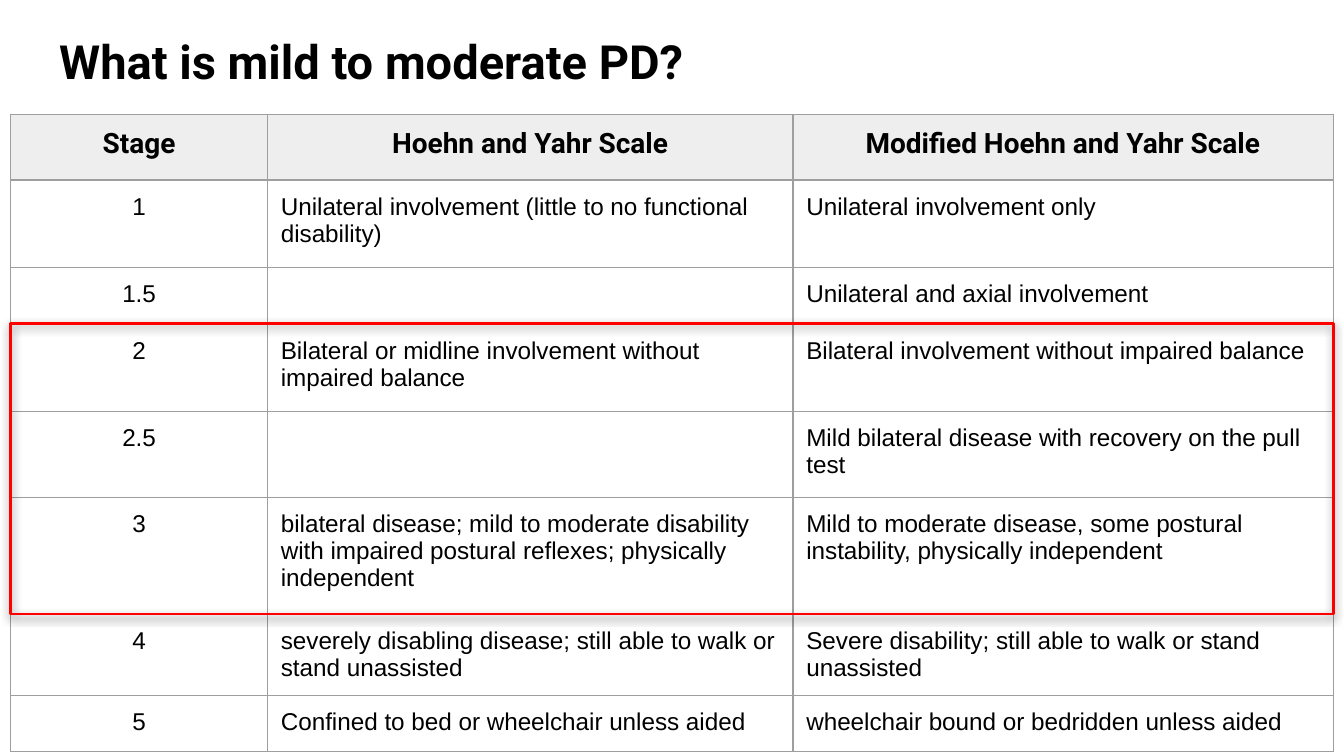
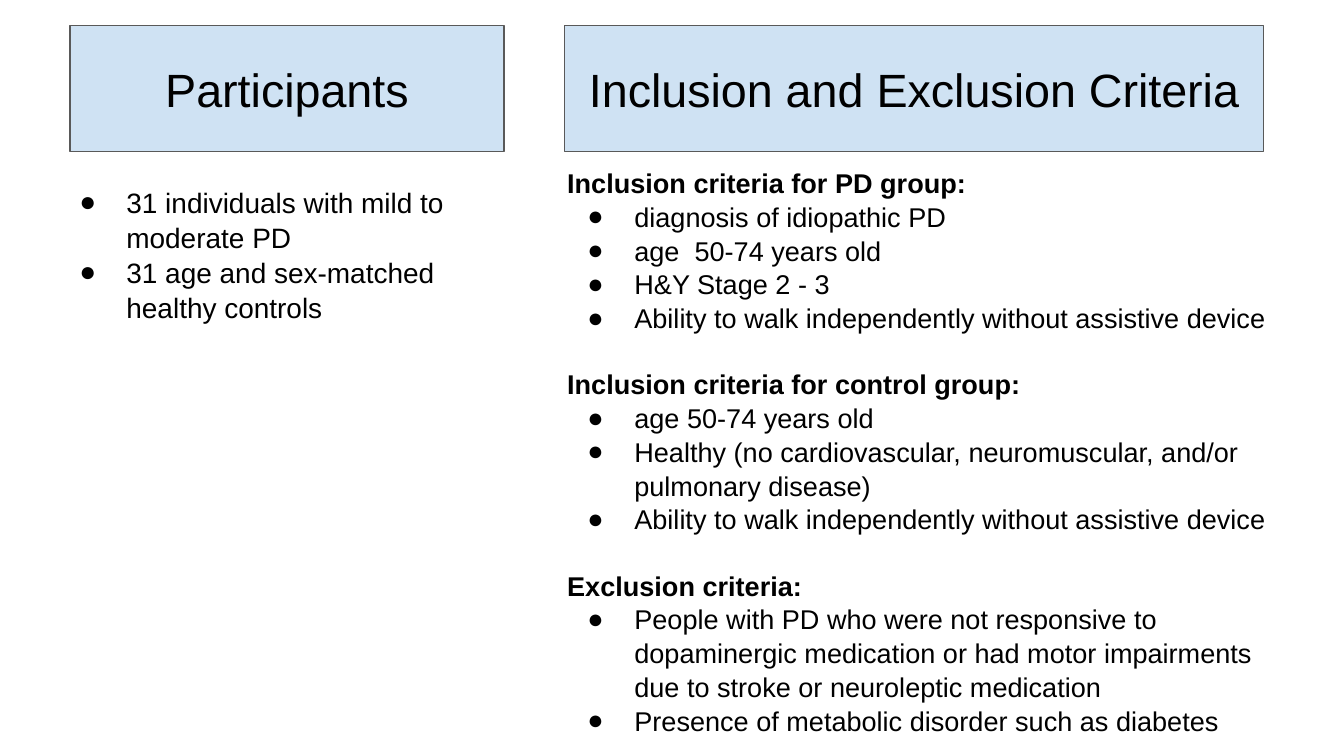
import pptx
import pptx.dml.color
import pptx.enum.shapes
import pptx.enum.text
import pptx.oxml
import pptx.oxml.ns
import pptx.util
from lxml import etree

WIDTH = 10
HEIGHT = WIDTH * 9 / 16
INSET = 0.1
BLACK, GREY, HEADER_GREY = "000000", "9E9E9E", "EEEEEE"
RED, PALE_BLUE, DARK_GREY = "FF0000", "CFE2F3", "595959"

STAGE_TITLE = "What is mild to moderate PD?"
STAGES = [
    ("Stage", "Hoehn and Yahr Scale", "Modified Hoehn and Yahr Scale"),
    ("1", "Unilateral involvement (little to no functional disability)",
     "Unilateral involvement only"),
    ("1.5", "", "Unilateral and axial involvement"),
    ("2", "Bilateral or midline involvement without impaired balance",
     "Bilateral involvement without impaired balance"),
    ("2.5", "", "Mild bilateral disease with recovery on the pull test"),
    ("3", "bilateral disease; mild to moderate disability with impaired "
     "postural reflexes; physically independent",
     "Mild to moderate disease, some postural instability, physically independent"),
    ("4", "severely disabling disease; still able to walk or stand unassisted",
     "Severe disability; still able to walk or stand unassisted"),
    ("5", "Confined to bed or wheelchair unless aided",
     "wheelchair bound or bedridden unless aided"),
]
STAGE_LEFT, STAGE_TOP = 0.08, 0.85
STAGE_COLUMNS = (1.91, 3.91, 4.02)
STAGE_ROWS = (0.49, 0.65, 0.42, 0.65, 0.64, 0.87, 0.6, 0.42)
MILD_TO_MODERATE = slice(3, 6)

BANNER_TOP, BANNER_HEIGHT = 0.19, 0.94
STUDY = [
    {
        "banner": "Participants", "banner_span": (0.52, 3.23),
        "list_box": (0.34, 1.27, 3.42, 1.54), "size": 15,
        "groups": [
            (None, ["31 individuals with mild to moderate PD",
                    "31 age and sex-matched healthy controls"]),
        ],
    },
    {
        "banner": "Inclusion and Exclusion Criteria", "banner_span": (4.2, 5.2),
        "list_box": (4.12, 1.13, 5.55, 4.42), "size": 14.5,
        "groups": [
            ("Inclusion criteria for PD group:",
             ["diagnosis of idiopathic PD",
              "age  50-74 years old",
              "H&Y Stage 2 - 3",
              "Ability to walk independently without assistive device"]),
            ("Inclusion criteria for control group:",
             ["age 50-74 years old",
              "Healthy (no cardiovascular, neuromuscular, and/or pulmonary disease)",
              "Ability to walk independently without assistive device"]),
            ("Exclusion criteria:",
             ["People with PD who were not responsive to dopaminergic medication "
              "or had motor impairments due to stroke or neuroleptic medication",
              "Presence of metabolic disorder such as diabetes"]),
        ],
    },
]
LINE_SPACING = 1.04
LINE_PITCH = 1.2


def color(value):
    return pptx.dml.color.RGBColor.from_string(value)


def inches(*lengths):
    return [pptx.util.Inches(length) for length in lengths]


def add_xml(parent, tag, **attributes):
    child = etree.SubElement(parent, pptx.oxml.ns.qn(tag))
    for name, value in attributes.items():
        child.set(name, str(value))
    return child


def format_runs(paragraph, size, face="Arial", bold=False):
    for run in paragraph.runs:
        run.font.size = pptx.util.Pt(size)
        run.font.name = face
        run.font.bold = bold
        run.font.color.rgb = color(BLACK)


def prepare_frame(frame, anchor):
    frame.word_wrap = True
    frame.auto_size = pptx.enum.text.MSO_AUTO_SIZE.NONE
    frame.vertical_anchor = anchor
    frame.margin_left = frame.margin_right = pptx.util.Inches(INSET)
    frame.margin_top = frame.margin_bottom = pptx.util.Inches(INSET)


def place(part, box):
    part.left, part.top, part.width, part.height = inches(*box)


def add_rectangle(slide, box, line, weight, fill=None):
    rectangle = slide.shapes.add_shape(
        pptx.enum.shapes.MSO_SHAPE.RECTANGLE, *inches(*box))
    rectangle.shadow.inherit = False
    rectangle.line.color.rgb = color(line)
    rectangle.line.width = pptx.util.Pt(weight)
    if fill:
        rectangle.fill.solid()
        rectangle.fill.fore_color.rgb = color(fill)
    else:
        rectangle.fill.background()
    return rectangle


def add_shadow(shape):
    effects = shape._element.spPr.find(pptx.oxml.ns.qn("a:effectLst"))
    shadow = add_xml(effects, "a:outerShdw", blurRad=pptx.util.Pt(4.5),
                     dist=pptx.util.Pt(1.5), dir=90 * 60000,
                     algn="bl", rotWithShape=0)
    add_xml(add_xml(shadow, "a:srgbClr", val=BLACK), "a:alpha", val=50000)


def format_cell(cell, is_header, is_centered):
    for side in ("margin_left", "margin_right", "margin_top", "margin_bottom"):
        setattr(cell, side, pptx.util.Inches(INSET))
    paragraph = cell.text_frame.paragraphs[0]
    if is_centered:
        paragraph.alignment = pptx.enum.text.PP_ALIGN.CENTER
    if is_header:
        format_runs(paragraph, 15, "Roboto", True)
    else:
        format_runs(paragraph, 13)
    if not cell.text:
        paragraph._p.get_or_add_endParaRPr().set("sz", "1300")
    properties = cell._tc.get_or_add_tcPr()
    for border in ("a:lnL", "a:lnR", "a:lnT", "a:lnB"):
        edge = add_xml(properties, border, w=pptx.util.Pt(0.75))
        add_xml(add_xml(edge, "a:solidFill"), "a:srgbClr", val=GREY)
    if is_header:
        cell.fill.solid()
        cell.fill.fore_color.rgb = color(HEADER_GREY)
    else:
        cell.fill.background()


def add_stage_table(slide):
    box = (STAGE_LEFT, STAGE_TOP, sum(STAGE_COLUMNS), sum(STAGE_ROWS))
    stages = slide.shapes.add_table(
        len(STAGE_ROWS), len(STAGE_COLUMNS), *inches(*box)).table
    stages.first_row = stages.horz_banding = False
    for column, width in zip(stages.columns, STAGE_COLUMNS):
        column.width = pptx.util.Inches(width)
    for row, height in zip(stages.rows, STAGE_ROWS):
        row.height = pptx.util.Inches(height)
    for r, entries in enumerate(STAGES):
        for c, entry in enumerate(entries):
            cell = stages.cell(r, c)
            cell.text_frame.text = entry
            format_cell(cell, r == 0, r == 0 or c == 0)


def build_stage_slide(deck):
    slide = deck.slides.add_slide(deck.slide_layouts[5])
    title = slide.shapes.title
    place(title, (0.34, 0.14, 9.32, 0.63))
    prepare_frame(title.text_frame, pptx.enum.text.MSO_ANCHOR.MIDDLE)
    title.text_frame.text = STAGE_TITLE
    heading = title.text_frame.paragraphs[0]
    heading.alignment = pptx.enum.text.PP_ALIGN.LEFT
    format_runs(heading, 25.2, "Roboto", True)
    add_stage_table(slide)
    highlight_top = STAGE_TOP + sum(STAGE_ROWS[:MILD_TO_MODERATE.start])
    highlight = add_rectangle(
        slide, (STAGE_LEFT, highlight_top, sum(STAGE_COLUMNS),
                sum(STAGE_ROWS[MILD_TO_MODERATE])), RED, 1.5)
    add_shadow(highlight)


def fill_list(body, groups, size):
    lines = []
    for heading, items in groups:
        if heading:
            lines.append((heading, True))
        lines += [(item, False) for item in items]
    frame = body.text_frame
    prepare_frame(frame, pptx.enum.text.MSO_ANCHOR.TOP)
    frame.text = "\n".join(text for text, _ in lines)
    for n, (paragraph, (_, is_heading)) in enumerate(zip(frame.paragraphs, lines)):
        gap = size * LINE_PITCH if is_heading and n else 0
        paragraph.space_before = pptx.util.Pt(gap)
        paragraph.space_after = pptx.util.Pt(0)
        paragraph.line_spacing = LINE_SPACING
        paragraph.alignment = pptx.enum.text.PP_ALIGN.LEFT
        format_runs(paragraph, size, bold=is_heading)
        properties = paragraph._p.get_or_add_pPr()
        margin, indent = (0, 0) if is_heading else inches(0.5, -0.35)
        properties.set("marL", str(margin))
        properties.set("indent", str(indent))
        if is_heading:
            add_xml(properties, "a:buNone")
        else:
            add_xml(add_xml(properties, "a:buClr"), "a:srgbClr", val=BLACK)
            add_xml(properties, "a:buFont", typeface="Arial")
            add_xml(properties, "a:buChar", char="●")


def build_study_slide(deck):
    slide = deck.slides.add_slide(deck.slide_layouts[3])
    title = slide.shapes.title._element
    title.getparent().remove(title)
    for section, body in zip(STUDY, list(slide.placeholders)):
        left, width = section["banner_span"]
        banner = add_rectangle(slide, (left, BANNER_TOP, width, BANNER_HEIGHT),
                               DARK_GREY, 0.75, PALE_BLUE)
        prepare_frame(banner.text_frame, pptx.enum.text.MSO_ANCHOR.MIDDLE)
        banner.text_frame.text = section["banner"]
        label = banner.text_frame.paragraphs[0]
        label.alignment = pptx.enum.text.PP_ALIGN.CENTER
        format_runs(label, 25)
        place(body, section["list_box"])
        fill_list(body, section["groups"], section["size"])


def main():
    deck = pptx.Presentation()
    deck.slide_width, deck.slide_height = inches(WIDTH, HEIGHT)
    build_stage_slide(deck)
    build_study_slide(deck)
    deck.save("out.pptx")


if __name__ == "__main__":
    main()
